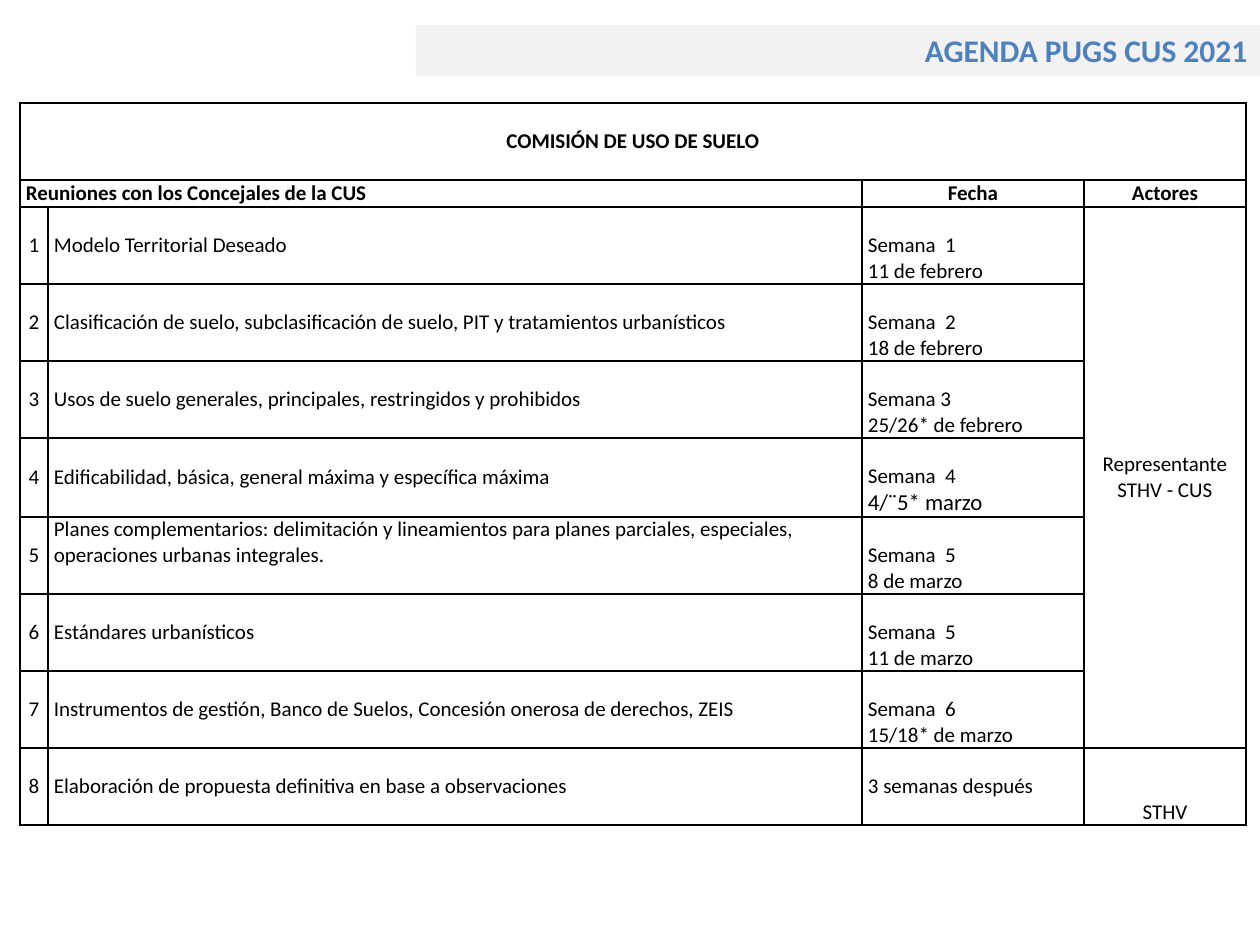
from lxml.etree import SubElement
from pptx import Presentation
from pptx.dml.color import RGBColor
from pptx.enum.shapes import MSO_SHAPE
from pptx.enum.text import MSO_ANCHOR, PP_ALIGN
from pptx.oxml.ns import qn
from pptx.util import Emu, Pt

PIXELS_PER_INCH = 126
BLACK = "000000"
COLUMN_WIDTHS = [28, 814, 222, 162]
ROW_HEIGHTS = [77, 27, 77, 77, 77, 79, 77, 77, 77, 77]
MEETINGS = [
    ("Modelo Territorial Deseado", ["Semana  1", "11 de febrero"]),
    ("Clasificación de suelo, subclasificación de suelo, PIT y tratamientos urbanísticos",
     ["Semana  2", "18 de febrero"]),
    ("Usos de suelo generales, principales, restringidos y prohibidos",
     ["Semana 3", "25/26* de febrero"]),
    ("Edificabilidad, básica, general máxima y específica máxima",
     ["Semana  4", "4/¨5* marzo"]),
    ("Planes complementarios: delimitación y lineamientos para planes parciales, "
     "especiales, operaciones urbanas integrales.", ["Semana  5", "8 de marzo"]),
    ("Estándares urbanísticos", ["Semana  5", "11 de marzo"]),
    ("Instrumentos de gestión, Banco de Suelos, Concesión onerosa de derechos, ZEIS",
     ["Semana  6", "15/18* de marzo"]),
    ("Elaboración de propuesta definitiva en base a observaciones", ["3 semanas después"]),
]
LONG_TOPIC = 5
LARGE_DATE = "4/¨5* marzo"


def px(length):
    return Emu(round(length * 914400 / PIXELS_PER_INCH))


def color(value):
    return RGBColor.from_string(value)


def write(para, text, size=12, bold=False, fill=BLACK, align=PP_ALIGN.LEFT):
    para.alignment = align
    span = para.add_run()
    span.text = text
    span.font.name = "Calibri"
    span.font.size = Pt(size)
    span.font.bold = bold
    span.font.color.rgb = color(fill)


def fill_cell(cell, *lines, anchor=MSO_ANCHOR.MIDDLE, **style):
    cell.vertical_anchor = anchor
    frame = cell.text_frame
    for index, line in enumerate(lines):
        para = frame.add_paragraph() if index else frame.paragraphs[0]
        write(para, line, size=13 if line == LARGE_DATE else 12, **style)


def frame_cell(cell):
    cell.margin_left = cell.margin_right = px(6)
    cell.margin_top = cell.margin_bottom = 0
    properties = cell._tc.get_or_add_tcPr()
    for side in ("a:lnL", "a:lnR", "a:lnT", "a:lnB"):
        line = SubElement(properties, qn(side), w=str(Pt(1)))
        solid = SubElement(line, qn("a:solidFill"))
        SubElement(solid, qn("a:srgbClr"), val=BLACK)
    cell.fill.background()


def add_grid(page, left, top):
    frame = page.shapes.add_table(len(ROW_HEIGHTS), len(COLUMN_WIDTHS), px(left), px(top),
                                  px(sum(COLUMN_WIDTHS)), px(sum(ROW_HEIGHTS)))
    table = frame.table
    table.first_row = table.horz_banding = False
    for column, width in zip(table.columns, COLUMN_WIDTHS):
        column.width = px(width)
    for row, height in zip(table.rows, ROW_HEIGHTS):
        row.height = px(height)
    for cell in table.iter_cells():
        frame_cell(cell)
    return table


def add_agenda(page):
    table = add_grid(page, 20, 103)
    table.cell(0, 0).merge(table.cell(0, 3))
    table.cell(1, 0).merge(table.cell(1, 1))
    table.cell(2, 3).merge(table.cell(8, 3))
    center = PP_ALIGN.CENTER
    fill_cell(table.cell(0, 0), "COMISIÓN DE USO DE SUELO", bold=True, align=center)
    fill_cell(table.cell(1, 0), "Reuniones con los Concejales de la CUS", bold=True)
    fill_cell(table.cell(1, 2), "Fecha", bold=True, align=center)
    fill_cell(table.cell(1, 3), "Actores", bold=True, align=center)
    for number, (topic, dates) in enumerate(MEETINGS, 1):
        row = number + 1
        topic_anchor = MSO_ANCHOR.TOP if number == LONG_TOPIC else MSO_ANCHOR.MIDDLE
        date_anchor = MSO_ANCHOR.BOTTOM if len(dates) > 1 else MSO_ANCHOR.MIDDLE
        fill_cell(table.cell(row, 0), str(number), align=center)
        fill_cell(table.cell(row, 1), topic, anchor=topic_anchor)
        fill_cell(table.cell(row, 2), *dates, anchor=date_anchor)
    fill_cell(table.cell(2, 3), "Representante STHV - CUS", align=center)
    fill_cell(table.cell(9, 3), "STHV", anchor=MSO_ANCHOR.BOTTOM, align=center)


def add_title(page, text):
    box = page.shapes.add_shape(MSO_SHAPE.RECTANGLE, px(416), px(25), px(844), px(51))
    box.shadow.inherit = False
    box.fill.solid()
    box.fill.fore_color.rgb = color("F2F2F2")
    box.line.fill.background()
    box.text_frame.word_wrap = True
    box.text_frame.vertical_anchor = MSO_ANCHOR.TOP
    write(box.text_frame.paragraphs[0], text, size=18, bold=True, fill="4F81BD",
          align=PP_ALIGN.RIGHT)


def main():
    deck = Presentation()
    deck.slide_width, deck.slide_height = px(1260), px(945)
    page = deck.slides.add_slide(deck.slide_layouts[6])
    add_agenda(page)
    add_title(page, "AGENDA PUGS CUS 2021")
    deck.save("out.pptx")


if __name__ == "__main__":
    main()
